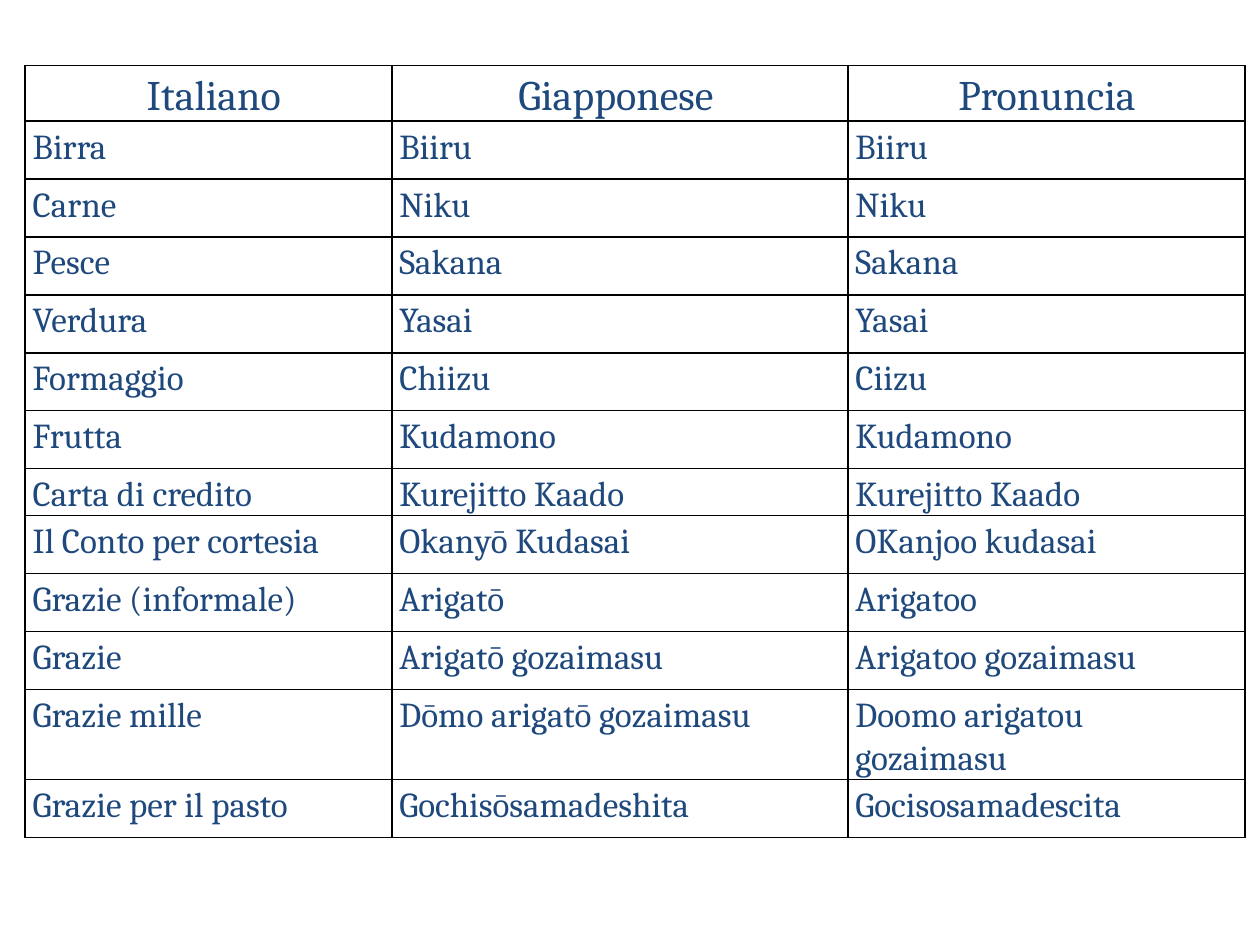
"""Build a slide with an Italian-Japanese phrase table for eating out."""

from typing import NamedTuple

from lxml.etree import SubElement
from pptx import Presentation
from pptx.dml.color import RGBColor
from pptx.enum.text import PP_ALIGN
from pptx.oxml.ns import qn
from pptx.util import Inches, Pt

COLORS = {"text": "1F497D", "border": "000000"}
FONT = "Cambria"
COL_WIDTHS = (2.91, 3.62, 3.15)
HEADER_HEIGHT, ROW_HEIGHT, CARD_HEIGHT = 0.27, 0.46, 0.36


class Phrase(NamedTuple):
    italian: str
    japanese: str
    spoken: str
    height: float = ROW_HEIGHT


HEADER = Phrase(" Italiano", "Giapponese ", "Pronuncia", HEADER_HEIGHT)
PHRASES = (
    Phrase("Birra", "Biiru", "Biiru"),
    Phrase("Carne", "Niku", "Niku"),
    Phrase("Pesce", "Sakana", "Sakana"),
    Phrase("Verdura", "Yasai", "Yasai"),
    Phrase("Formaggio", "Chiizu", "Ciizu"),
    Phrase("Frutta", "Kudamono", "Kudamono"),
    Phrase("Carta di credito", "Kurejitto Kaado", "Kurejitto Kaado", CARD_HEIGHT),
    Phrase("Il Conto per cortesia", "Okanyō Kudasai", "OKanjoo kudasai"),
    Phrase("Grazie (informale)", "Arigatō", "Arigatoo"),
    Phrase("Grazie", "Arigatō gozaimasu", "Arigatoo gozaimasu"),
    Phrase("Grazie mille", "Dōmo arigatō gozaimasu", "Doomo arigatou gozaimasu"),
    Phrase("Grazie per il pasto", "Gochisōsamadeshita", "Gocisosamadescita"),
)


def add_borders(cell) -> None:
    tcPr = cell._tc.get_or_add_tcPr()
    for side in ("a:lnL", "a:lnR", "a:lnT", "a:lnB"):
        ln = SubElement(tcPr, qn(side), w=str(Pt(1)))
        fill = SubElement(ln, qn("a:solidFill"))
        SubElement(fill, qn("a:srgbClr"), val=COLORS["border"])


def fill_cell(cell, text: str, size: int, align: PP_ALIGN) -> None:
    cell.margin_left, cell.margin_top = Inches(0.06), Inches(0.03)
    cell.margin_right, cell.margin_bottom = Inches(0.05), Inches(0)
    add_borders(cell)
    cell.fill.background()
    p = cell.text_frame.paragraphs[0]
    p.alignment = align
    p.line_spacing = 1.07
    r = p.add_run()
    r.text = text
    r.font.name = FONT
    r.font.size = Pt(size)
    r.font.color.rgb = RGBColor.from_string(COLORS["text"])


def add_phrase_table(s, rows: tuple[Phrase, ...]) -> None:
    height = sum(row.height for row in rows)
    table = s.shapes.add_table(
        len(rows), len(COL_WIDTHS), Inches(0.2), Inches(0.52),
        Inches(sum(COL_WIDTHS)), Inches(height),
    ).table
    table.first_row = table.horz_banding = False
    for column, width in zip(table.columns, COL_WIDTHS):
        column.width = Inches(width)
    for i, phrase in enumerate(rows):
        table.rows[i].height = Inches(phrase.height)
        size, align = (20, PP_ALIGN.LEFT) if i else (24, PP_ALIGN.CENTER)
        texts = (phrase.italian, phrase.japanese, phrase.spoken)
        for cell, text in zip(table.rows[i].cells, texts):
            fill_cell(cell, text, size, align)


def main() -> None:
    prs = Presentation()
    prs.slide_width, prs.slide_height = Inches(10), Inches(7.5)
    s = prs.slides.add_slide(prs.slide_layouts[6])
    add_phrase_table(s, (HEADER, *PHRASES))
    prs.save("out.pptx")


if __name__ == "__main__":
    main()
